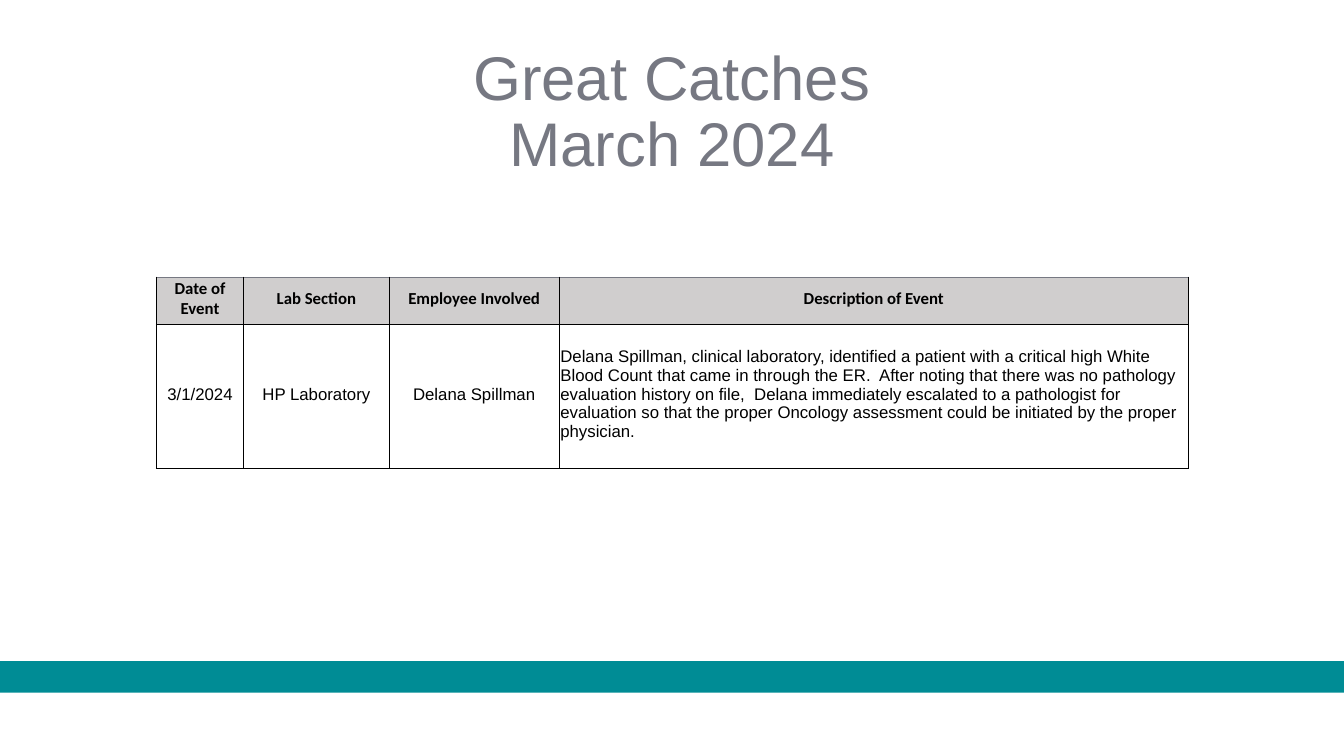
from pptx import Presentation
from pptx.dml.color import RGBColor
from pptx.enum.shapes import MSO_SHAPE as Shape
from pptx.enum.text import MSO_ANCHOR as Anchor, PP_ALIGN as Align
from pptx.oxml.ns import qn
from pptx.util import Pt
from lxml.etree import SubElement

# Content
TITLE = "Great Catches\vMarch 2024"
HEADERS = ["Date of Event", "Lab Section", "Employee Involved", "Description of Event"]
EVENTS = [
    (
        "3/1/2024",
        "HP Laboratory",
        "Delana Spillman",
        "Delana Spillman, clinical laboratory, identified a patient with a critical high "
        "White Blood Count that came in through the ER.  After noting that there was no "
        "pathology evaluation history on file,  Delana immediately escalated to a "
        "pathologist for evaluation so that the proper Oncology assessment could be "
        "initiated by the proper physician.",
    ),
]

# Colours and lengths in points
WHITE = RGBColor(0xFF, 0xFF, 0xFF)
BLACK = RGBColor(0x00, 0x00, 0x00)
GRAY = RGBColor(0x76, 0x78, 0x82)
LIGHT_GRAY = RGBColor(0xD0, 0xCE, 0xCE)
TEAL = RGBColor(0x00, 0x8C, 0x95)
PAGE_WIDTH, PAGE_HEIGHT = 960, 540
TABLE_LEFT, TABLE_TOP = 111.6, 198
COLUMN_WIDTHS = [62.6, 103.7, 121.7, 449.3]
HEADER_HEIGHT, EVENT_HEIGHT = 33.1, 103


def write(frame, text, size=12, font="Arial", color=BLACK, bold=False,
          align=Align.CENTER, spacing=1.0):
    frame.word_wrap = True
    frame.text = text
    para = frame.paragraphs[0]
    para.alignment = align
    para.line_spacing = spacing
    for span in para.runs:
        span.font.size = Pt(size)
        span.font.name = font
        span.font.bold = bold
        span.font.color.rgb = color


def add_border(cell, side, color=BLACK, width=0.75):
    line = SubElement(cell._tc.get_or_add_tcPr(), qn(f"a:ln{side}"), w=str(Pt(width)))
    fill = SubElement(line, qn("a:solidFill"))
    SubElement(fill, qn("a:srgbClr"), val=str(color))


def format_cell(cell, is_header):
    cell.vertical_anchor = Anchor.MIDDLE
    cell.margin_left = cell.margin_right = cell.margin_top = Pt(0.7)
    cell.margin_bottom = Pt(3.6)
    for side in "LRTB":
        if is_header and side == "T":
            add_border(cell, side, color=GRAY, width=1)
        else:
            add_border(cell, side)
    if is_header:
        cell.fill.solid()
        cell.fill.fore_color.rgb = LIGHT_GRAY
    else:
        cell.fill.background()


# Page
deck = Presentation()
deck.slide_width, deck.slide_height = Pt(PAGE_WIDTH), Pt(PAGE_HEIGHT)
page = deck.slides.add_slide(deck.slide_layouts[5])
page.background.fill.solid()
page.background.fill.fore_color.rgb = WHITE

# Footer band
band = page.shapes.add_shape(Shape.RECTANGLE, 0, Pt(472.3), Pt(PAGE_WIDTH), Pt(22.5))
band.shadow.inherit = False
band.fill.solid()
band.fill.fore_color.rgb = TEAL
band.line.fill.background()

# Title
title = page.shapes.title
title.left, title.top, title.width, title.height = Pt(66), Pt(28.8), Pt(828), Pt(104.4)
title.text_frame.vertical_anchor = Anchor.MIDDLE
write(title.text_frame, TITLE, size=44, color=GRAY, spacing=0.9)

# Table of events
rows = [HEADERS, *EVENTS]
heights = [HEADER_HEIGHT] + [EVENT_HEIGHT] * len(EVENTS)
table = page.shapes.add_table(
    len(rows), len(HEADERS), Pt(TABLE_LEFT), Pt(TABLE_TOP),
    Pt(sum(COLUMN_WIDTHS)), Pt(sum(heights))).table
for column, width in zip(table.columns, COLUMN_WIDTHS):
    column.width = Pt(width)
for row_index, (texts, height) in enumerate(zip(rows, heights)):
    table.rows[row_index].height = Pt(height)
    is_header = row_index == 0
    for column_index, text in enumerate(texts):
        cell = table.cell(row_index, column_index)
        is_description = not is_header and column_index == len(HEADERS) - 1
        write(cell.text_frame, text, bold=is_header,
              font="Calibri" if is_header else "Arial",
              align=Align.LEFT if is_description else Align.CENTER)
        format_cell(cell, is_header)

deck.save("out.pptx")
